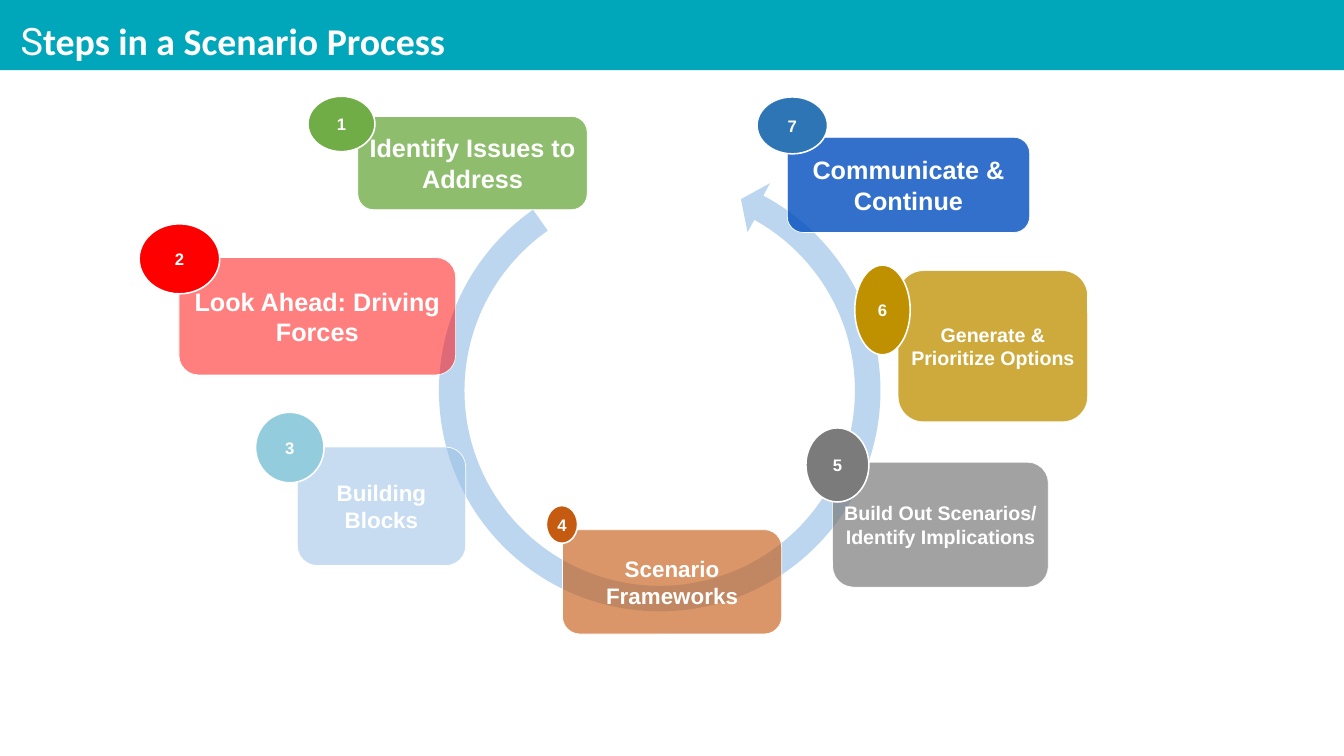
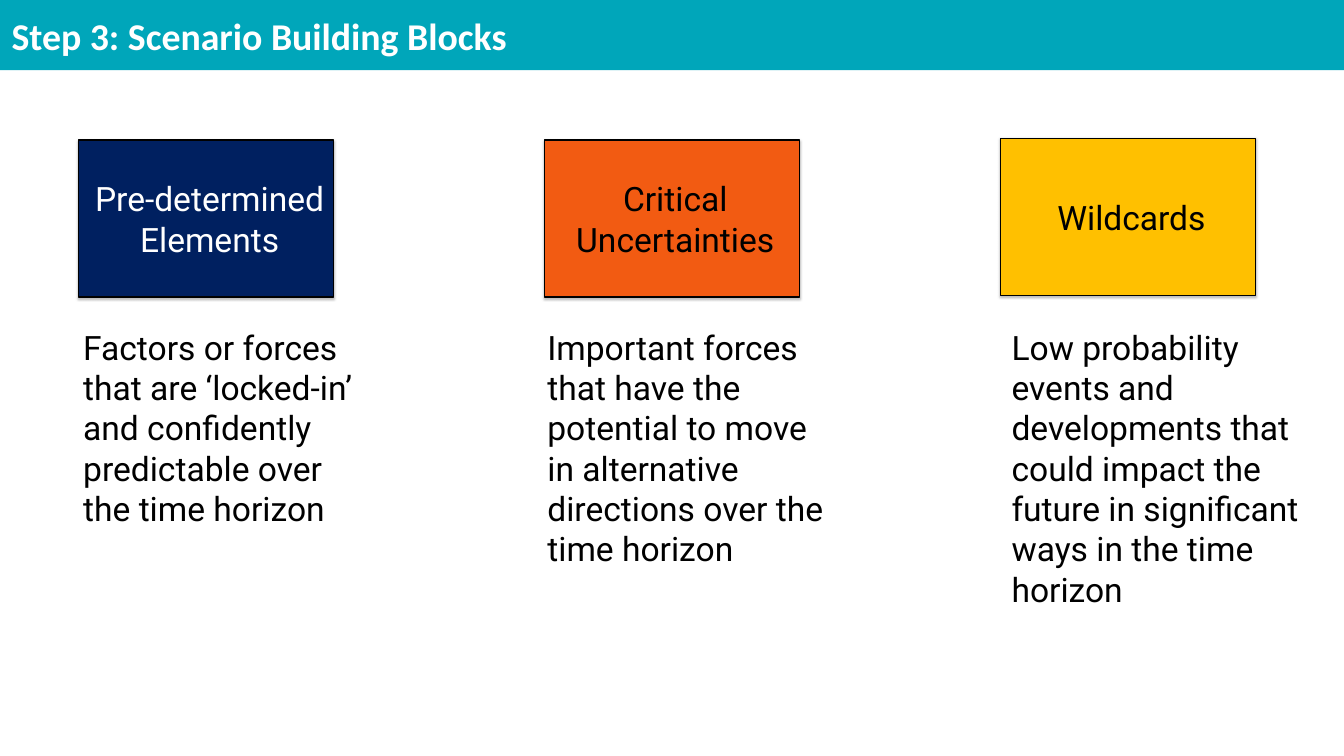
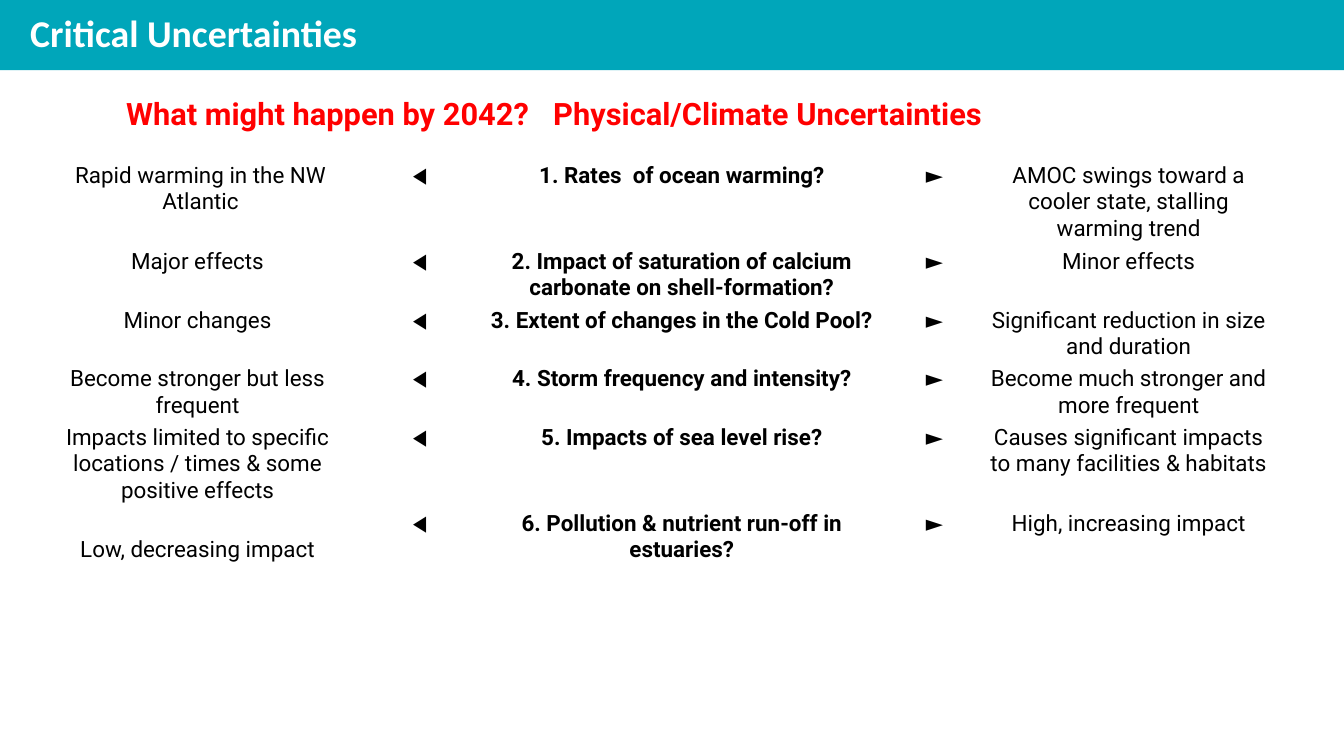
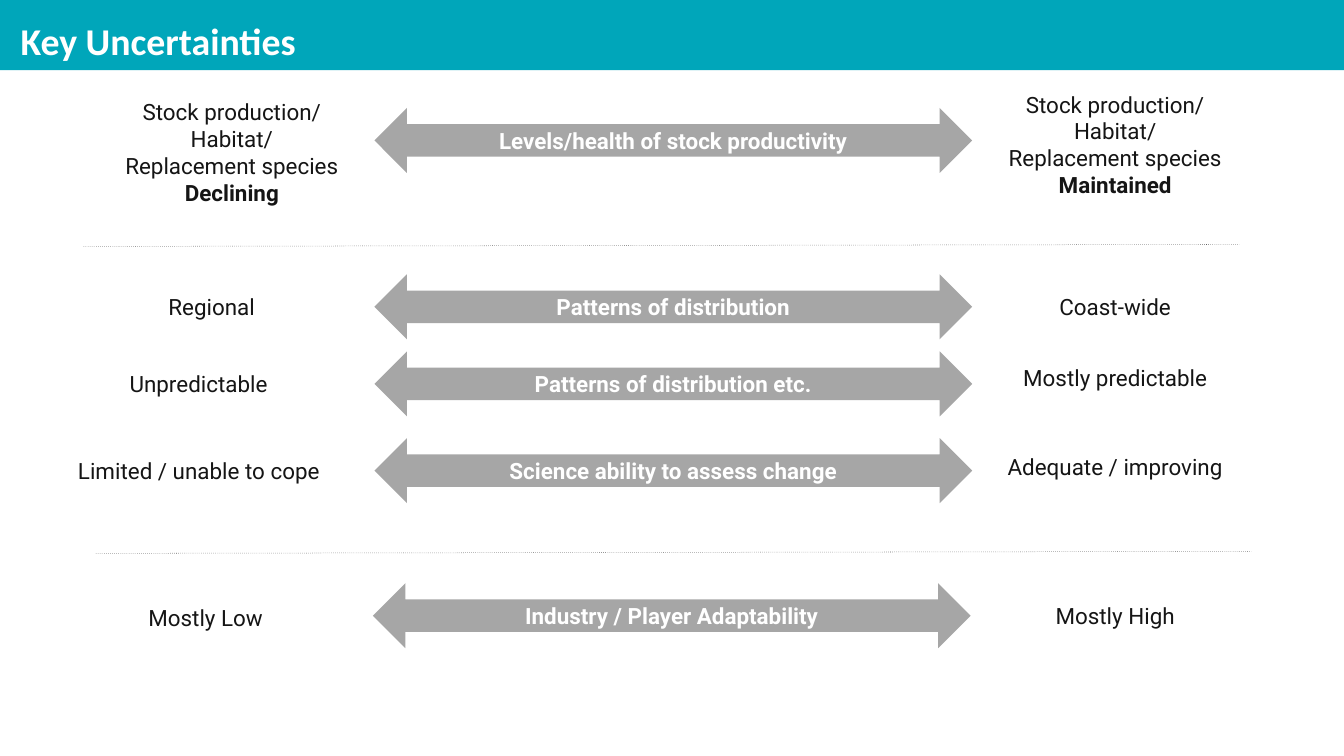
from math import cos, radians, sin, tan

from pptx import Presentation
from pptx.dml.color import RGBColor
from pptx.enum.dml import MSO_LINE
from pptx.enum.shapes import MSO_CONNECTOR, MSO_SHAPE
from pptx.enum.text import MSO_ANCHOR, MSO_AUTO_SIZE, PP_ALIGN
from pptx.oxml import parse_xml
from pptx.oxml.ns import nsdecls, qn
from pptx.oxml.xmlchemy import OxmlElement
from pptx.util import Inches, Pt

# The slide is a grid of 80 columns and 45 rows of square cells.
COLS, ROWS = 80, 45
CELL = Inches(1) / 3

COLORS = {
    "band": "00A6BA", "white": "FFFFFF", "black": "000000", "label": "151515",
    "red": "FF0000", "ring": "BBD6EE", "arrow": "A6A6A6", "rule": "5E5E5E",
    "green": "70AD47", "sky": "9CC2E5", "aqua": "93CDDD", "rust": "C55A11",
    "gray": "7B7B7B", "gold": "BF9000", "cobalt": "004DBF", "blue": "2E75B5",
    "navy": "002060", "orange": "F25B12", "amber": "FFC000",
}

# lines, text size, box, box colour, opacity, badge box relative to the box, badge colour
STEPS = [
    (["Identify Issues to Address"], 36, (21.3, 6.93, 13.65, 5.55), "green", 79,
     (-2.97, -1.2, 3.99, 3.3), "green"),
    (["Look Ahead: Driving Forces"], 36, (10.65, 15.33, 16.47, 6.99), "red", 50,
     (-2.37, -2.01, 4.8, 4.17), "red"),
    (["Building Blocks"], 32, (17.7, 26.61, 10.02, 7.05), "sky", 56,
     (-2.49, -2.07, 4.08, 4.2), "aqua"),
    (["Scenario Frameworks"], 32, (33.48, 31.53, 13.05, 6.21), "rust", 63,
     (-0.96, -1.44, 1.86, 2.25), "rust"),
    (["Build Out Scenarios/", "Identify Implications"], 28,
     (49.56, 27.51, 12.84, 7.44), "gray", 70, (-1.59, -2.04, 3.75, 4.41), "gray"),
    (["Generate & Prioritize Options"], 28, (53.46, 16.11, 11.28, 9), "gold", 76,
     (-2.58, -0.33, 3.3, 5.34), "gold"),
    (["Communicate & Continue"], 36, (46.86, 8.17, 14.43, 5.67), "cobalt", 80,
     (-1.8, -2.4, 4.2, 3.39), "blue"),
]

# heading, fill, text colour, box column and row
BLOCKS = [
    ("Critical Uncertainties", "orange", "black", 32.4, 8.33),
    ("Wildcards", "amber", "black", 59.55, 8.23),
    ("Pre-determined Elements", "navy", "white", 4.68, 8.33),
]
DESCRIPTIONS = [
    (4.68, 12.39, "Factors or forces that are ‘locked-in’ and confidently "
     "predictable over the time horizon"),
    (59.94, 17.22, "Low probability events and developments that could impact "
     "the future in significant ways in the time horizon"),
    (32.31, 14.82, "Important forces that have the potential to move in "
     "alternative directions over the time horizon"),
]

CLIMATE = [
    ("Rapid warming in the NW Atlantic", "1. Rates of ocean warming?",
     "AMOC swings toward a cooler state, stalling warming trend"),
    ("Major effects",
     "2. Impact of saturation of calcium carbonate on shell-formation?",
     "Minor effects"),
    ("Minor changes", "3. Extent of changes in the Cold Pool?",
     "Significant reduction in size and duration"),
    ("Become stronger but less frequent", "4. Storm frequency and intensity?",
     "Become much stronger and more frequent"),
    ("Impacts limited to specific locations / times & some positive effects",
     "5. Impacts of sea level rise?",
     "Causes significant impacts to many facilities & habitats"),
    ("Low, decreasing impact", "6. Pollution & nutrient run-off in estuaries?",
     "High, increasing impact"),
]

STOCK = ["Stock production/", "Habitat/", "Replacement species"]
# arrow text, arrow column and middle row, then for both labels:
# lines, centre column, middle row, width
RANGES = [
    ("Levels/health of stock productivity", 22.29, 8.36,
     (STOCK + ["Declining"], 13.8, 9.05, 13.26),
     (STOCK + ["Maintained"], 66.38, 8.6, 13.26)),
    ("Patterns of distribution", 22.29, 18.26,
     (["Coast-wide"], 66.38, 18.26, 7.26), (["Regional"], 12.6, 18.26, 5.58)),
    ("Patterns of distribution etc.", 22.29, 22.85,
     (["Mostly predictable"], 66.38, 22.49, 11.49),
     (["Unpredictable"], 11.82, 22.85, 8.82)),
    ("Science ability to assess change", 22.29, 28.01,
     (["Adequate / improving"], 66.38, 27.77, 13.29),
     (["Limited / unable to cope"], 11.84, 28.01, 14.97)),
    ("Industry / Player Adaptability", 22.2, 36.65,
     (["Mostly High"], 66.38, 36.65, 7.53), (["Mostly Low"], 12.24, 36.77, 7.26)),
]


def grid(*cells):
    return [round(c * CELL) for c in cells]


def rgb(name):
    return RGBColor.from_string(COLORS[name])


def style(runs, size, color, font="Roboto", bold=False):
    for r in runs:
        f = r.font
        f.size, f.name, f.bold = Pt(size), font, bold
        f.color.rgb = rgb(color)


def write(tf, lines, size, color, font="Roboto", bold=False,
          align=PP_ALIGN.CENTER, anchor=MSO_ANCHOR.MIDDLE, inset=(0.06, 0.06)):
    """Fill a text frame, one paragraph per line; inset is (sides, top and bottom)."""
    tf.word_wrap = True
    tf.vertical_anchor = anchor
    tf.margin_left = tf.margin_right = Inches(inset[0])
    tf.margin_top = tf.margin_bottom = Inches(inset[1])
    tf.text = "\n".join(lines)
    for p in tf.paragraphs:
        p.alignment = align
        style(p.runs, size, color, font, bold)


def widen_gap(p, word, extra, size, color):
    """Widen the space after a word of a bold paragraph by some points."""
    before, after = p.text.split(word + " ")
    p.text = before + word
    for text in (" ", after):
        p.add_run().text = text
    style(p.runs, size, color, bold=True)
    p.runs[1]._r.get_or_add_rPr().set("spc", str(extra * 100))


def add_text(s, box, lines, size, color, **options):
    tf = s.shapes.add_textbox(*grid(*box)).text_frame
    write(tf, lines, size, color, **options)
    tf.auto_size = MSO_AUTO_SIZE.SHAPE_TO_FIT_TEXT
    return tf


def paint(sp, fill, line=None, width=1):
    sp.shadow.inherit = False
    sp.fill.solid()
    sp.fill.fore_color.rgb = rgb(fill)
    if line:
        sp.line.color.rgb = rgb(line)
        sp.line.width = Pt(width)
    else:
        sp.line.fill.background()


def add_box(s, kind, box, fill, line=None, width=1):
    sp = s.shapes.add_shape(kind, *grid(*box))
    paint(sp, fill, line, width)
    return sp


def set_opacity(sp, percent):
    alpha = OxmlElement("a:alpha")
    alpha.set("val", str(percent * 1000))
    sp._element.spPr.find(qn("a:solidFill"))[0].append(alpha)


def drop_shadow(sp):
    effects = sp._element.spPr.find(qn("a:effectLst"))
    effects.append(parse_xml(
        f'<a:outerShdw {nsdecls("a")} blurRad="{Pt(3)}" dist="{Pt(2)}" dir="5400000" '
        'rotWithShape="0"><a:srgbClr val="808080"><a:alpha val="49000"/></a:srgbClr>'
        '</a:outerShdw>'))


def move_band_to_master(prs, s):
    """Draw the title band on a slide and hand it to the master all slides share."""
    band = add_box(s, MSO_SHAPE.RECTANGLE, (0, 0, COLS, 4.17), "band")._element
    band.nvSpPr.cNvPr.set("id", "100")
    prs.slide_master.shapes._spTree.append(band)


def add_slide(prs, title, col, row, width):
    s = prs.slides.add_slide(prs.slide_layouts[6])
    if len(prs.slides) == 1:
        move_band_to_master(prs, s)
    tf = add_text(s, (col, row, width, 3.06), [title], 54, "white", font="Calibri",
                  bold=True, align=PP_ALIGN.LEFT, anchor=MSO_ANCHOR.TOP)
    return s, tf.paragraphs[0]


def arc(radius, start, end, pieces):
    """Polar points of Bézier pieces along an arc: two controls and an end for each."""
    step = (end - start) / pieces
    reach = 4 / 3 * tan(radians(step / 4))
    points = []
    for i in range(pieces):
        a, b = radians(start + i * step), radians(start + (i + 1) * step)
        points += [(cos(a) - reach * sin(a), sin(a) + reach * cos(a)),
                   (cos(b) + reach * sin(b), sin(b) - reach * cos(b)),
                   (cos(b), sin(b))]
    return [(radius * x, radius * y) for x, y in points]


def curve(lines):
    """Turn each three line segments of an outline into one Bézier curve."""
    for first, second, third in zip(lines[::3], lines[1::3], lines[2::3]):
        bezier = OxmlElement("a:cubicBezTo")
        first.addprevious(bezier)
        for line in (first, second, third):
            bezier.append(line[0])
            line.getparent().remove(line)


def add_ring(s, col, row, radius, half_band, half_head):
    """Draw the open ring, running anticlockwise from upper left to its arrowhead."""
    start, end, tip, pieces = 235, -62, -67, 5

    def polar(r, angle):
        return r * cos(radians(angle)), r * sin(radians(angle))

    outer = arc(radius + half_band, start, end, pieces)
    head = [polar(radius + half_head, end), polar(radius, tip),
            polar(radius - half_head, end + 1), polar(radius - half_band, end + 1)]
    inner = arc(radius - half_band, end + 1, start, pieces)
    points = [grid(col + x, row + y) for x, y in
              [polar(radius + half_band, start)] + outer + head + inner]
    builder = s.shapes.build_freeform(*points[0])
    builder.add_line_segments(points[1:], close=True)
    sp = builder.convert_to_shape()
    lines = list(sp._element.iter(qn("a:lnTo")))
    curve(lines[:len(outer)])
    curve(lines[len(outer) + len(head):][:len(inner)])
    paint(sp, "ring")


def add_step(s, number, lines, size, box, fill, opacity, badge, badge_fill):
    sp = add_box(s, MSO_SHAPE.ROUNDED_RECTANGLE, box, fill, "white")
    set_opacity(sp, opacity)
    write(sp.text_frame, lines, size, "white", "Arial", True, inset=(0.1, 0.05))
    dx, dy, w, h = badge
    sp = add_box(s, MSO_SHAPE.OVAL, (box[0] + dx, box[1] + dy, w, h),
                 badge_fill, "white", 2.25)
    write(sp.text_frame, [str(number)], 23.8, "white", "Arial", True, inset=(0.05, 0.05))


def process_slide(prs):
    s, p = add_slide(prs, "S", 1.05, 0.9, 59.16)
    style(p.runs, 54, "white")
    r = p.add_run()
    r.text = "teps in a Scenario Process"
    style([r], 54, "white", "Calibri", True)
    add_ring(s, 39.27, 23.25, 12.38, 0.76, 1.6)
    for number, step in enumerate(STEPS, 1):
        add_step(s, number, *step)


def blocks_slide(prs):
    s, _ = add_slide(prs, "Step 3: Scenario Building Blocks", 0.51, 0.6, 78.45)
    for heading, fill, color, col, row in BLOCKS:
        sp = add_box(s, MSO_SHAPE.RECTANGLE, (col, row, 15.18, 9.36), fill, "black", 2)
        drop_shadow(sp)
        write(sp.text_frame, [heading], 48, color, inset=(0.03, 0.03))
        sp.text_frame.paragraphs[0]._p.get_or_add_pPr().set("marL", str(Inches(0.14)))
    for col, height, description in DESCRIPTIONS:
        add_text(s, (col, 19.33, 17.9, height), [description], 48, "black",
                 align=PP_ALIGN.LEFT, anchor=MSO_ANCHOR.TOP, inset=(0.09, 0.04))


def add_climate_table(s, col, row, widths, row_height):
    frame = s.shapes.add_table(len(CLIMATE), len(widths), *grid(
        col, row, sum(widths), row_height * len(CLIMATE)))
    table = frame.table
    table.first_row = table.horz_banding = False
    for column, width in zip(table.columns, grid(*widths)):
        column.width = width
    for r, (low, question, high) in enumerate(CLIMATE):
        for c, text in enumerate((low, "◀︎", question, "►", high)):
            cell = table.cell(r, c)
            cell.fill.background()
            cell.text = text
            p = cell.text_frame.paragraphs[0]
            p.alignment = PP_ALIGN.CENTER
            style(p.runs, 32, "black", bold=c == 2)
    widen_gap(table.cell(0, 2).text_frame.paragraphs[0], "Rates", 8, 32, "black")
    table.cell(0, 0).margin_left = Inches(0.22)
    # The last low end stands one line below its question.
    table.cell(len(CLIMATE) - 1, 0).margin_top = Inches(0.57)


def climate_slide(prs):
    s, _ = add_slide(prs, "Critical Uncertainties", 1.62, 0.37, 78.3)
    tf = add_text(s, (5.7, 5.46, 55.05, 2.55),
                  ["What might happen by 2042? Physical/Climate Uncertainties "],
                  44, "red", bold=True)
    widen_gap(tf.paragraphs[0], "2042?", 23, 44, "red")
    add_climate_table(s, 1.62, 9.53, (20.28, 6.21, 24.96, 5.1, 18.03), 2.5)


def add_label(s, lines, center, middle, width):
    height = 0.33 + 1.62 * len(lines)
    tf = add_text(s, (center - width / 2, middle - height / 2, width, height),
                  lines, 32, "label")
    tf.word_wrap = False
    if len(lines) > 1:
        tf.paragraphs[-1].runs[0].font.bold = True


def add_range(s, text, col, middle, *labels):
    height = 3.87
    sp = add_box(s, MSO_SHAPE.LEFT_RIGHT_ARROW,
                 (col, middle - height / 2, 35.58, height), "arrow")
    write(sp.text_frame, [text], 32, "white", bold=True)
    for label in labels:
        add_label(s, *label)


def add_rule(s, col, row):
    line = s.shapes.add_connector(MSO_CONNECTOR.STRAIGHT,
                                  *grid(col, row, col + 68.79, row - 0.12))
    line.line.color.rgb = rgb("rule")
    line.line.width = Pt(0.75)
    line.line.dash_style = MSO_LINE.ROUND_DOT
    next(line._element.iter(qn("a:prstDash"))).set("val", "dot")
    line._element.spPr.append(OxmlElement("a:effectLst"))


def ranges_slide(prs):
    s, _ = add_slide(prs, "Key Uncertainties", 1.05, 0.9, 71.97)
    for entry in RANGES:
        add_range(s, *entry)
    add_rule(s, 4.98, 14.67)
    add_rule(s, 5.7, 32.94)


def main():
    prs = Presentation()
    prs.slide_width, prs.slide_height = grid(COLS, ROWS)
    for build in (process_slide, blocks_slide, climate_slide, ranges_slide):
        build(prs)
    prs.save("out.pptx")


if __name__ == "__main__":
    main()
